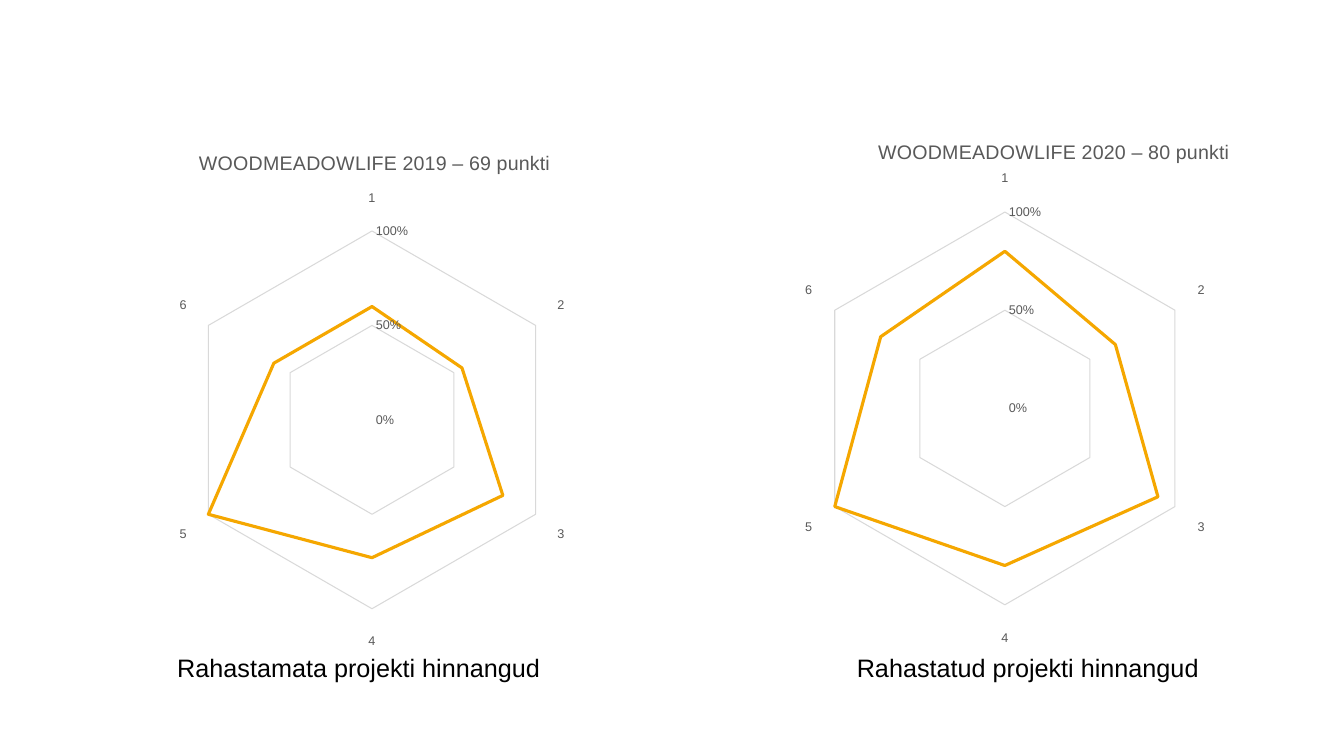
from lxml import etree
from pptx import Presentation
from pptx import util as u
from pptx.chart.data import CategoryChartData
from pptx.dml.color import RGBColor
from pptx.enum import chart as charts, text
from pptx.oxml.ns import qn

# Content: positions in inches; title_at is (left, top), web is (top, height) of the hexagon
CATEGORIES = ["1", "2", "3", "4", "5", "6"]
RADARS = [
    dict(title="WOODMEADOWLIFE 2019 – 69 punkti", values=[0.6, 0.55, 0.8, 0.73, 1, 0.6],
         box=(0.48, 1.25, 6.42, 5.37), title_at=(1.94, 1.46), web=(2.29, 3.75),
         caption="Rahastamata projekti hinnangud", caption_box=(1.66, 6.42, 4.06, 0.4)),
    dict(title="WOODMEADOWLIFE 2020 – 80 punkti", values=[0.8, 0.65, 0.9, 0.8, 1, 0.73],
         box=(6.76, 1.05, 6.42, 5.54), title_at=(8.67, 1.35), web=(2.1, 3.9),
         caption="Rahastatud projekti hinnangud", caption_box=(8.4, 6.42, 3.74, 0.4)),
]

FONT = "Arial"
BLACK = RGBColor(0x00, 0x00, 0x00)
GRAY = RGBColor(0x59, 0x59, 0x59)
GRID = RGBColor(0xD9, 0xD9, 0xD9)
ORANGE = RGBColor(0xF5, 0xA7, 0x00)


def format_font(font, size, color):
    font.name, font.size, font.bold = FONT, u.Pt(size), False
    font.color.rgb = color


def format_line(line, color, width):
    line.color.rgb, line.width = color, u.Pt(width)


def write(frame, words, size, color):
    paragraph = frame.paragraphs[0]
    run = paragraph.add_run()
    run.text = words
    format_font(run.font, size, color)


def place(parent, anchor, **settings):
    """Give a chart part a manual layout, set just before the anchor element."""
    for old in parent.findall(qn("c:layout")):
        parent.remove(old)
    layout = etree.Element(qn("c:layout"))
    manual = etree.SubElement(layout, qn("c:manualLayout"))
    for name, value in settings.items():
        etree.SubElement(manual, qn("c:" + name)).set("val", str(value))
    anchor.addprevious(layout)


def add_radar(slide, radar):
    left, top, width, height = radar["box"]
    data = CategoryChartData(number_format="0%")
    data.categories = CATEGORIES
    data.add_series("Series 1", radar["values"])
    chart = slide.shapes.add_chart(charts.XL_CHART_TYPE.RADAR,
                                   *map(u.Inches, radar["box"]), data).chart
    format_font(chart.font, 10, BLACK)
    chart.has_legend = False

    # Title
    chart.has_title = True
    write(chart.chart_title.text_frame, radar["title"], 14, GRAY)
    chart.chart_title.include_in_layout = False
    title = chart.chart_title._element
    title_left, title_top = radar["title_at"]
    place(title, title.find(qn("c:overlay")), xMode="edge", yMode="edge",
          x=round((title_left - left) / width, 3), y=round((title_top - top) / height, 3))

    # Square plot area, centred across the chart
    web_top, side = radar["web"]
    plot_area = chart._chartSpace.chart.plotArea
    place(plot_area, plot_area.find(qn("c:radarChart")), layoutTarget="inner",
          xMode="edge", yMode="edge",
          x=round((width - side) / 2 / width, 3), y=round((web_top - top) / height, 3),
          w=round(side / width, 3), h=round(side / height, 3))

    # Axes
    for axis in (chart.category_axis, chart.value_axis):
        axis.major_tick_mark = axis.minor_tick_mark = charts.XL_TICK_MARK.NONE
        format_font(axis.tick_labels.font, 9, GRAY)
    chart.category_axis.has_major_gridlines = False
    format_line(chart.category_axis.format.line, GRID, 0.75)
    scale = chart.value_axis
    scale.minimum_scale, scale.maximum_scale, scale.major_unit = 0, 1, 0.5
    scale.tick_labels.number_format = "0%"
    scale.tick_labels.number_format_is_linked = False
    scale.format.line.fill.background()
    scale.has_major_gridlines = True
    format_line(scale.major_gridlines.format.line, GRID, 0.75)

    # Series
    plot = chart.plots[0]
    plot.vary_by_categories = False
    series = plot.series[0]
    series.smooth = False
    format_line(series.format.line, ORANGE, 2.25)


def add_caption(slide, radar):
    frame = slide.shapes.add_textbox(*map(u.Inches, radar["caption_box"])).text_frame
    frame.word_wrap = False
    frame.auto_size = text.MSO_AUTO_SIZE.SHAPE_TO_FIT_TEXT
    write(frame, radar["caption"], 18, BLACK)


def main():
    presentation = Presentation()
    presentation.slide_width, presentation.slide_height = u.Inches(13.33), u.Inches(7.5)
    slide = presentation.slides.add_slide(presentation.slide_layouts[6])
    for radar in RADARS:
        add_radar(slide, radar)
    for radar in RADARS:
        add_caption(slide, radar)
    presentation.save("out.pptx")


if __name__ == "__main__":
    main()
